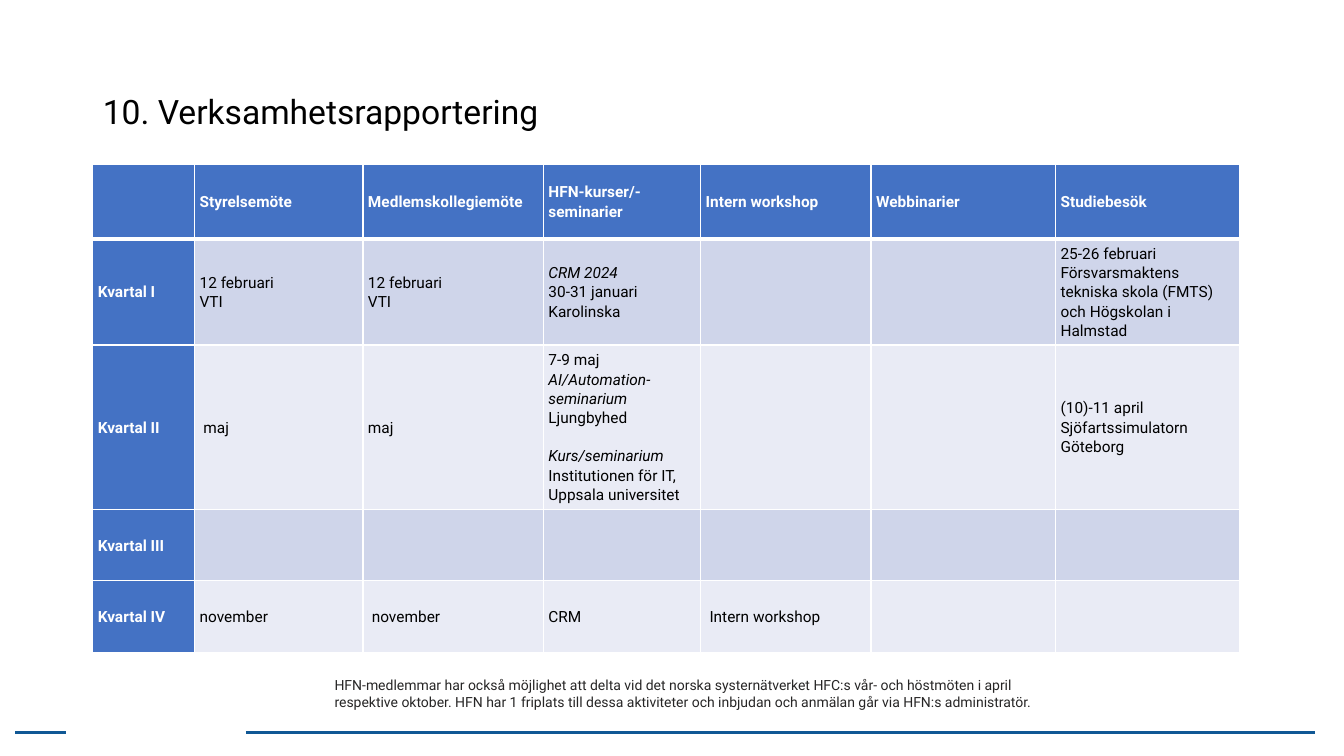
from dataclasses import dataclass

import lxml.etree
import pptx
import pptx.dml.color
import pptx.enum.shapes
import pptx.enum.text
import pptx.oxml.ns
import pptx.util

Inches = pptx.util.Inches
Pt = pptx.util.Pt
RGBColor = pptx.dml.color.RGBColor
qn = pptx.oxml.ns.qn

WHITE = RGBColor(0xFF, 0xFF, 0xFF)
BLACK = RGBColor(0x00, 0x00, 0x00)
CHARCOAL = RGBColor(0x27, 0x26, 0x26)
RULE_BLUE = RGBColor(0x10, 0x58, 0x95)
HEADER_BLUE = RGBColor(0x44, 0x72, 0xC4)
BANDS = (RGBColor(0xCF, 0xD5, 0xEA), RGBColor(0xE9, 0xEB, 0xF5))
FONT = "Roboto"
CELL_SIZE = 11
LINE_SPACING = 1.07


@dataclass(frozen=True)
class Span:
    text: str
    italic: bool = False


@dataclass(frozen=True)
class Para:
    spans: tuple[Span, ...]
    before: float = 0
    after: float = 0


@dataclass(frozen=True)
class Rule:
    start: float
    end: float


def plain(text: str, after: float = 0) -> Para:
    return Para((Span(text),), after=after)


def italic(text: str, before: float = 0) -> Para:
    return Para((Span(text, True),), before=before)


Cell = tuple[Para, ...]
EMPTY: Cell = ()
BOARD_MEETING: Cell = (plain("12 februari\nVTI"),)

COLUMN_WIDTHS = (1.01, 1.67, 1.79, 1.56, 1.69, 1.83, 1.83)
ROW_HEIGHTS = (0.74, 1.05, 1.63, 0.71, 0.71)
HEADINGS = ("", "Styrelsemöte", "Medlemskollegiemöte", "HFN-kurser/-seminarier",
            "Intern workshop", "Webbinarier", "Studiebesök")
QUARTERS: dict[str, tuple[Cell, ...]] = {
    "Kvartal I": (
        BOARD_MEETING,
        BOARD_MEETING,
        (italic("CRM 2024"), plain("30-31 januari Karolinska")),
        EMPTY,
        EMPTY,
        (plain("25-26 februari"),
         plain("Försvarsmaktens tekniska skola (FMTS) och Högskolan i Halmstad")),
    ),
    "Kvartal II": (
        (plain(" maj"),),
        (plain("maj"),),
        (plain("7-9 maj"),
         Para((Span("AI/Automation-seminarium ", True), Span("Ljungbyhed"))),
         italic("Kurs/seminarium", before=13.8),
         plain("Institutionen för IT, Uppsala universitet")),
        EMPTY,
        EMPTY,
        (plain("(10)-11 april"), plain("Sjöfartssimulatorn"), plain("Göteborg")),
    ),
    "Kvartal III": (EMPTY,) * 6,
    "Kvartal IV": (
        (plain("november"),),
        (plain(" november"),),
        (plain("CRM"),),
        (plain(" Intern workshop"),),
        EMPTY,
        EMPTY,
    ),
}
RULES = (Rule(2.44, 13.04), Rule(0.15, 0.65))
RULE_TOP = 7.27
FOOTNOTE = ("HFN-medlemmar har också möjlighet att delta vid det norska systernätverket "
            "HFC:s vår- och höstmöten i april respektive oktober. HFN har 1 friplats till "
            "dessa aktiviteter och inbjudan och anmälan går via HFN:s administratör.")


def add_span(paragraph, text: str, size: float, color: RGBColor,
             bold: bool = False, slanted: bool = False) -> None:
    for index, line in enumerate(text.split("\n")):
        if index:
            paragraph.add_line_break()
        span = paragraph.add_run()
        span.text = line
        span.font.name = FONT
        span.font.size = Pt(size)
        span.font.bold = bold
        span.font.italic = slanted
        span.font.color.rgb = color


def set_borders(cell, top: float, bottom: float) -> None:
    properties = cell._tc.get_or_add_tcPr()
    widths = {"a:lnL": 1, "a:lnR": 1, "a:lnT": top, "a:lnB": bottom}
    for index, (tag, width) in enumerate(widths.items()):
        border = lxml.etree.Element(qn(tag), w=str(Pt(width)))
        fill = lxml.etree.SubElement(border, qn("a:solidFill"))
        lxml.etree.SubElement(fill, qn("a:srgbClr"), val=str(WHITE))
        properties.insert(index, border)


def fill_cell(cell, content: Cell, fill: RGBColor, color: RGBColor, bold: bool) -> None:
    cell.fill.solid()
    cell.fill.fore_color.rgb = fill
    cell.vertical_anchor = pptx.enum.text.MSO_ANCHOR.MIDDLE
    cell.margin_left = cell.margin_right = Inches(0.05)
    cell.margin_top = cell.margin_bottom = Inches(0.05)
    frame = cell.text_frame
    for index, para in enumerate(content):
        paragraph = frame.add_paragraph() if index else frame.paragraphs[0]
        paragraph.line_spacing = LINE_SPACING
        paragraph.space_before = Pt(para.before)
        paragraph.space_after = Pt(para.after)
        for span in para.spans:
            add_span(paragraph, span.text, CELL_SIZE, color, bold, span.italic)


def add_schedule(page) -> None:
    headings = tuple((plain(text, after=8),) if text else EMPTY for text in HEADINGS)
    rows = [headings] + [((plain(name),), *cells) for name, cells in QUARTERS.items()]
    table = page.shapes.add_table(
        len(rows), len(HEADINGS), Inches(0.92), Inches(1.63),
        Inches(sum(COLUMN_WIDTHS)), Inches(sum(ROW_HEIGHTS))).table
    table.first_col = True
    for column, width in zip(table.columns, COLUMN_WIDTHS):
        column.width = Inches(width)
    for row_index, contents in enumerate(rows):
        table.rows[row_index].height = Inches(ROW_HEIGHTS[row_index])
        for column_index, content in enumerate(contents):
            cell = table.cell(row_index, column_index)
            heading = row_index == 0 or column_index == 0
            fill = HEADER_BLUE if heading else BANDS[(row_index - 1) % 2]
            fill_cell(cell, content, fill, WHITE if heading else BLACK, heading)
            set_borders(cell, top=3 if row_index == 1 else 1,
                        bottom=3 if row_index == 0 else 1)


def add_rule(page, rule: Rule) -> None:
    line = page.shapes.add_connector(
        pptx.enum.shapes.MSO_CONNECTOR.STRAIGHT,
        Inches(rule.start), Inches(RULE_TOP), Inches(rule.end), Inches(RULE_TOP))
    line.line.color.rgb = RULE_BLUE
    line.line.width = Pt(2.25)
    lxml.etree.SubElement(line._element.spPr, qn("a:effectLst"))


def add_title(page) -> None:
    title = page.shapes.title
    title.left, title.top = Inches(0.92), Inches(0.4)
    title.width, title.height = Inches(11.5), Inches(1.45)
    frame = title.text_frame
    frame.auto_size = pptx.enum.text.MSO_AUTO_SIZE.NONE
    frame.vertical_anchor = pptx.enum.text.MSO_ANCHOR.MIDDLE
    paragraph = frame.paragraphs[0]
    paragraph.alignment = pptx.enum.text.PP_ALIGN.LEFT
    paragraph.line_spacing = 0.9
    add_span(paragraph, "10. Verksamhetsrapportering", 24, BLACK)


def add_footnote(page) -> None:
    box = page.shapes.add_textbox(Inches(3.22), Inches(6.66), Inches(7.46), Inches(0.44))
    frame = box.text_frame
    frame.word_wrap = True
    frame.auto_size = pptx.enum.text.MSO_AUTO_SIZE.SHAPE_TO_FIT_TEXT
    add_span(frame.paragraphs[0], FOOTNOTE, 10, CHARCOAL)


def main() -> None:
    deck = pptx.Presentation()
    deck.slide_width, deck.slide_height = Inches(13.33), Inches(7.5)
    page = deck.slides.add_slide(deck.slide_layouts.get_by_name("Title Only"))

    # Footer rules
    for rule in RULES:
        add_rule(page, rule)

    # Heading, schedule and footnote
    add_title(page)
    add_schedule(page)
    add_footnote(page)
    deck.save("out.pptx")


if __name__ == "__main__":
    main()
